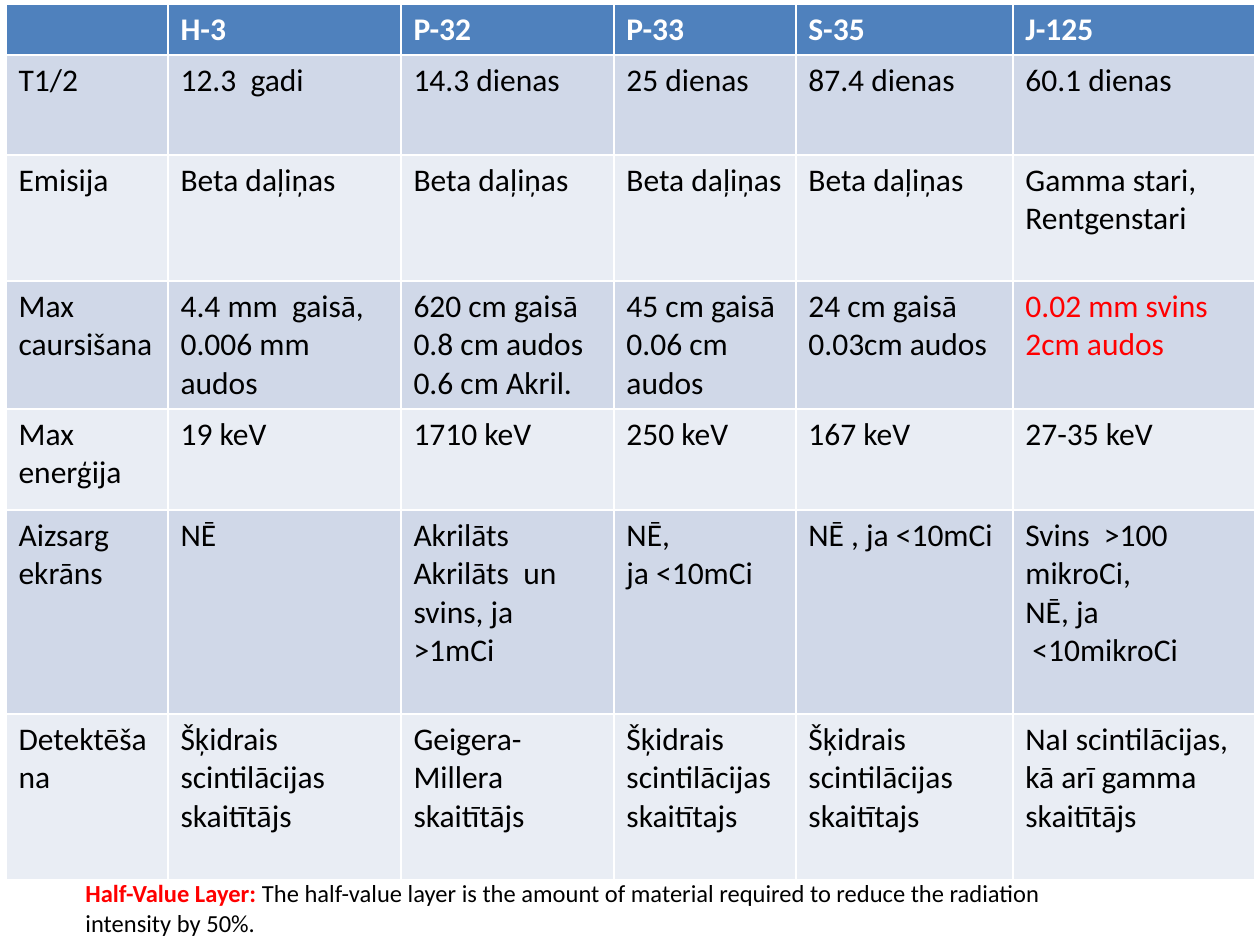
"""Build a slide that compares five radioactive isotopes in a table."""
from dataclasses import dataclass

from pptx import Presentation
from pptx.dml.color import RGBColor
from pptx.enum.text import MSO_AUTO_SIZE
from pptx.util import Emu, Pt

FIT = MSO_AUTO_SIZE.SHAPE_TO_FIT_TEXT
SCALE = 914400 / 126
FONT = "Calibri"
BLUE, DARK, LIGHT = "4F81BD", "D0D8E8", "E9EDF4"
WHITE, BLACK, RED = "FFFFFF", "000000", "FF0000"
COLS = [162, 233, 213, 182, 217, 242]


@dataclass
class Row:
    high: int
    texts: list[str]
    last: str = BLACK


ROWS = [
    Row(50, ["", "H-3", "P-32", "P-33", "S-35", "J-125"], WHITE),
    Row(100, ["T1/2", "12.3  gadi", "14.3 dienas", "25 dienas",
              "87.4 dienas", "60.1 dienas"]),
    Row(126, ["Emisija"] + ["Beta daļiņas"] * 4
        + ["Gamma stari,\nRentgenstari"]),
    Row(128, ["Max caursišana", "4.4 mm  gaisā,\n0.006 mm audos",
              "620 cm gaisā\n0.8 cm audos\n0.6 cm Akril.",
              "45 cm gaisā\n0.06 cm audos", "24 cm gaisā\n0.03cm audos",
              "0.02 mm svins\n2cm audos"], RED),
    Row(101, ["Max enerģija", "19 keV", "1710 keV", "250 keV", "167 keV",
              "27-35 keV"]),
    Row(204, ["Aizsarg\nekrāns", "NĒ",
              "Akrilāts\nAkrilāts  un svins, ja  ˃1mCi",
              "NĒ,\nja <10mCi", "NĒ , ja <10mCi",
              "Svins  ˃100 mikroCi,\nNĒ, ja\n <10mikroCi"]),
    Row(166, ["Detektēšana", "Šķidrais scintilācijas skaitītājs",
              "Geigera-Millera skaitītājs"]
        + ["Šķidrais scintilācijas\nskaitītajs"] * 2
        + ["NaI scintilācijas,  kā arī gamma skaitītājs"]),
]


def px(count: int) -> Emu:
    """Turn pixels into EMU."""
    return Emu(round(count * SCALE))


def color(code: str) -> RGBColor:
    """Turn a hex string into a colour."""
    return RGBColor.from_string(code)


def style(run, size: int, code: str, bold: bool) -> None:
    """Format one run."""
    font = run.font
    font.name, font.size, font.bold = FONT, Pt(size), bold
    font.color.rgb = color(code)


def draw_row(table, index: int, row: Row) -> None:
    """Fill one table row."""
    table.rows[index].height = px(row.high)
    head = index == 0
    shade = BLUE if head else (LIGHT, DARK)[index % 2]
    for col, text in enumerate(row.texts):
        cell = table.cell(index, col)
        cell.fill.solid()
        cell.fill.fore_color.rgb = color(shade)
        cell.text_frame.text = text
        final = col == len(COLS) - 1
        code = WHITE if head else row.last if final else BLACK
        for para in cell.text_frame.paragraphs:
            for run in para.runs:
                style(run, 18, code, head)


def draw_table(slide) -> None:
    """Draw the isotope table."""
    high = sum(row.high for row in ROWS)
    frame = slide.shapes.add_table(len(ROWS), len(COLS), px(6), px(4),
                                   px(sum(COLS)), px(high))
    table = frame.table
    for col, wide in zip(table.columns, COLS):
        col.width = px(wide)
    for index, row in enumerate(ROWS):
        draw_row(table, index, row)


def draw_note(slide) -> None:
    """Draw the definition below the table."""
    box = slide.shapes.add_textbox(px(73), px(872), px(987), px(72))
    frame = box.text_frame
    frame.word_wrap = True
    frame.auto_size = FIT
    para = frame.paragraphs[0]
    para.text = "Half-Value Layer:"
    style(para.runs[0], 14, RED, True)
    run = para.add_run()
    run.text = (" The half-value layer is the amount of material required "
                "to reduce the radiation intensity by 50%.")
    style(run, 14, BLACK, False)


def main() -> None:
    """Build and save the slide."""
    deck = Presentation()
    deck.slide_width, deck.slide_height = px(1260), px(945)
    slide = deck.slides.add_slide(deck.slide_layouts[6])
    draw_table(slide)
    draw_note(slide)
    deck.save("out.pptx")


if __name__ == "__main__":
    main()
